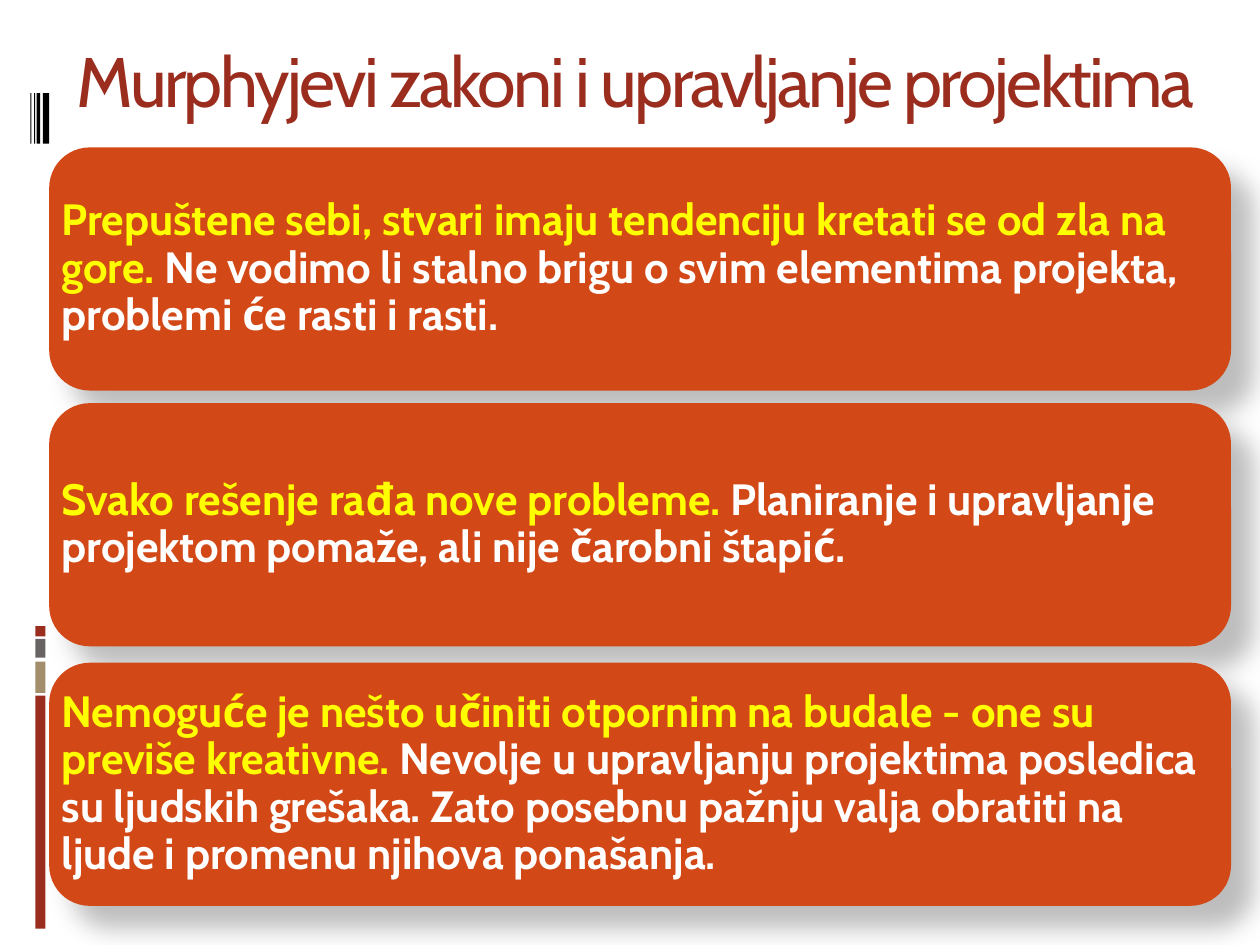
from dataclasses import dataclass
from typing import Any

from lxml.etree import SubElement
from pptx import Presentation
from pptx.dml.color import RGBColor
from pptx.enum.shapes import MSO_SHAPE
from pptx.enum.text import MSO_ANCHOR, PP_ALIGN
from pptx.oxml.ns import qn
from pptx.util import Inches, Pt

WIDTH, HEIGHT = 10, 7.5
RUST, BRICK, YELLOW, WHITE = "D34817", "9B2D1F", "FFFF00", "FFFFFF"
CARD_LEFT, CARD_WIDTH, CARD_HEIGHT = 0.39, 9.38, 1.93
STRIPES = [(4.97, 0.08, BRICK), (5.07, 0.15, "696464"), (5.25, 0.25, "A28E6A"), (5.52, 1.85, BRICK)]
BARCODE = [(0.24, 0.01), (0.27, 0.01), (0.29, 0.03), (0.34, 0.05)]
LAWS = [
    (1.17, "Prepuštene sebi, stvari imaju tendenciju kretati se od zla na gore. ",
     "Ne vodimo li stalno brigu o svim elementima projekta, problemi će rasti i rasti."),
    (3.2, "Svako rešenje rađa nove probleme. ",
     "Planiranje i upravljanje projektom pomaže, ali nije čarobni štapić."),
    (5.26, "Nemoguće je nešto učiniti otpornim na budale - one su previše kreativne. ",
     "Nevolje u upravljanju projektima posledica su ljudskih grešaka. Zato posebnu pažnju "
     "valja obratiti na ljude i promenu njihova ponašanja."),
]


def color(value):
    """Turn a hex string into a colour."""
    return RGBColor.from_string(value)


def add_text(para, text, *, font, size, fill, bold=False, spacing=None):
    """Add a formatted span of text to a paragraph."""
    span = para.add_run()
    span.text = text
    span.font.name, span.font.size, span.font.bold = font, Pt(size), bold
    span.font.color.rgb = color(fill)
    if spacing is not None:
        span.font._element.set("spc", str(round(spacing * 100)))


def cast_shadow(shape):
    """Give a shape a soft shadow to the lower right."""
    effects = shape._element.spPr.get_or_add_effectLst() if hasattr(
        shape._element.spPr, "get_or_add_effectLst") else SubElement(shape._element.spPr, qn("a:effectLst"))
    shadow = SubElement(effects, qn("a:outerShdw"), blurRad=str(Pt(15)), dist=str(Pt(18)),
                        dir=str(45 * 60000), algn="tl", rotWithShape="0")
    tint = SubElement(shadow, qn("a:srgbClr"), val="000000")
    SubElement(tint, qn("a:alpha"), val="26000")


@dataclass
class Composer:
    """Hold the style and the current slide."""

    page: Any
    font: str = "Cabin"

    def title(self, text, place):
        """Place and format the title."""
        box = self.page.shapes.title
        box.left, box.top, box.width, box.height = map(Inches, place)
        frame = box.text_frame
        frame.word_wrap = True
        frame.vertical_anchor = MSO_ANCHOR.TOP
        para = frame.paragraphs[0]
        para.alignment = PP_ALIGN.CENTER
        add_text(para, text, font=self.font, size=40, fill=BRICK, spacing=-1.5)

    def block(self, place, fill, kind=MSO_SHAPE.RECTANGLE):
        """Draw a filled shape without an outline."""
        shape = self.page.shapes.add_shape(kind, *map(Inches, place))
        shape.shadow.inherit = False
        shape.fill.solid()
        shape.fill.fore_color.rgb = color(fill)
        shape.line.fill.background()
        return shape

    def card(self, top, law, remark):
        """Draw a shadowed card with a law and a remark on it."""
        place = (CARD_LEFT, top, CARD_WIDTH, CARD_HEIGHT)
        cast_shadow(self.block(place, RUST, MSO_SHAPE.ROUNDED_RECTANGLE))
        frame = self.page.shapes.add_textbox(*map(Inches, place)).text_frame
        frame.word_wrap = True
        frame.vertical_anchor = MSO_ANCHOR.MIDDLE
        frame.margin_left = frame.margin_right = frame.margin_top = frame.margin_bottom = Inches(0.1)
        para = frame.paragraphs[0]
        para.line_spacing = 0.9
        for text, fill in ((law, YELLOW), (remark, WHITE)):
            add_text(para, text, font=self.font, size=25, fill=fill, bold=True)


def main():
    """Build and save the deck."""
    deck = Presentation()
    deck.slide_width, deck.slide_height = Inches(WIDTH), Inches(HEIGHT)
    composer = Composer(deck.slides.add_slide(deck.slide_layouts[5]))
    for top, height, fill in STRIPES:
        composer.block((0.28, top, 0.08, height), fill)
    for left, width in BARCODE:
        composer.block((left, 0.74, width, 0.4), "000000")
    composer.title("Murphyjevi zakoni i upravljanje projektima", (0.17, 0.25, 9.75, 1.25))
    for law in LAWS:
        composer.card(*law)
    deck.save("out.pptx")


if __name__ == "__main__":
    main()
